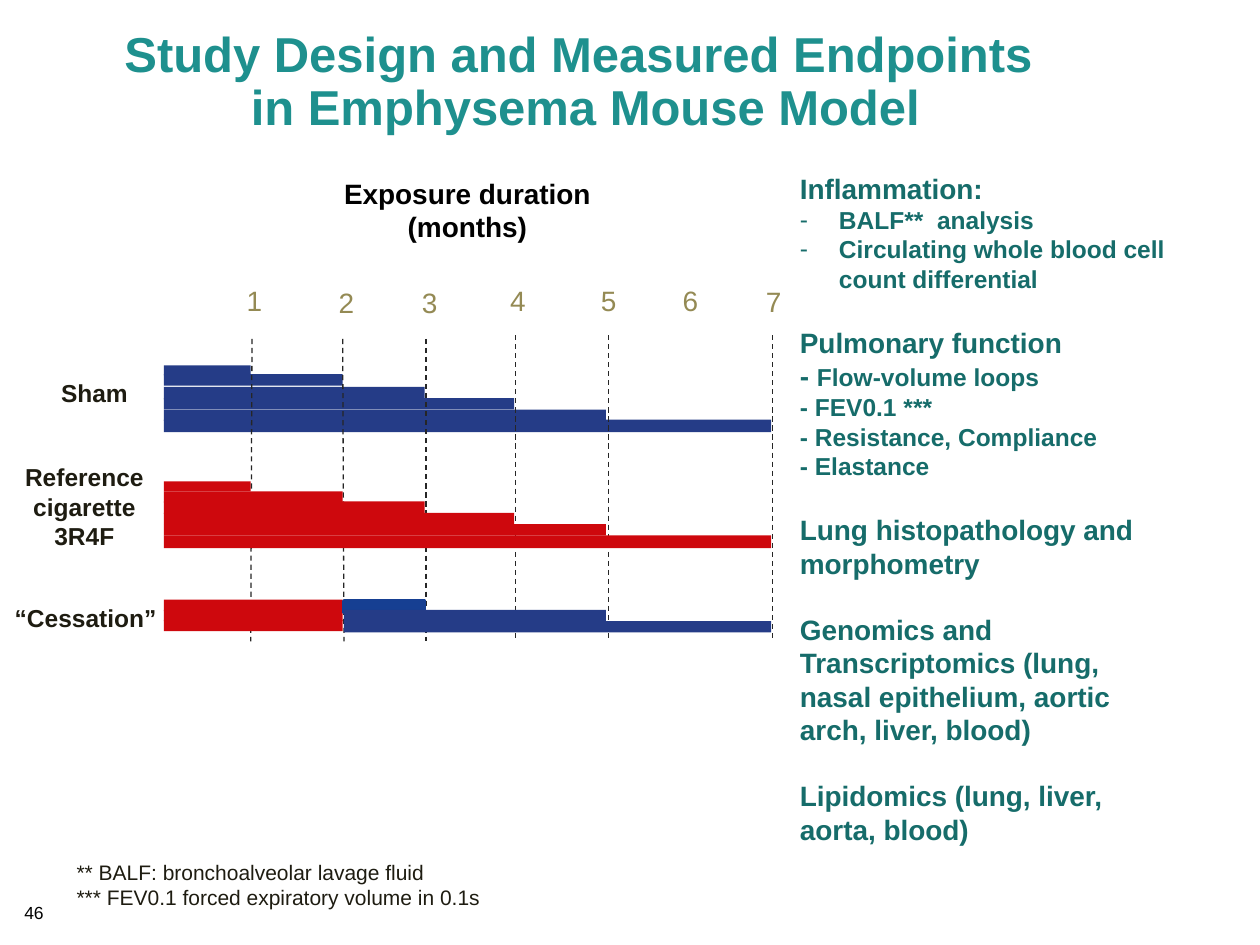
from dataclasses import dataclass

from lxml import etree
from pptx import Presentation
from pptx import util as u
from pptx.dml.color import RGBColor
from pptx.enum import dml, shapes, text
from pptx.oxml.ns import qn

COLORS = {
    "title": "1E908E",
    "endpoint": "166C6A",
    "month": "948A54",
    "label": "1E1C11",
    "black": "000000",
    "dash": "262626",
    "sham": "253C87",
    "smoke": "CE080D",
    "stop": "163F92",
}
FONT = "Arial"
START, QUIT = 1.3, 2.73
MONTH_ENDS = {1: 1.99, 2: 2.72, 3: 3.37, 4: 4.08, 5: 4.81, 7: 6.12}
STEP_HEIGHTS = (0.08, 0.09, 0.1, 0.09, 0.09, 0.1)
CENTER = text.PP_ALIGN.CENTER


@dataclass
class Para:
    text: str
    size: float = 14
    before: float = 0
    bullet: bool = False
    lead: str = ""


@dataclass
class Bar:
    left: float
    month: int
    top: float
    height: float
    color: str
    outline: float = 0


@dataclass
class Marker:
    x1: float
    x2: float
    top: float


@dataclass
class Label:
    text: str
    left: float
    top: float
    width: float
    height: float


def rgb(name: str) -> RGBColor:
    return RGBColor.from_string(COLORS[name])


def add_run(p, content: str, size: float, color: str, bold: bool) -> None:
    r = p.add_run()
    r.text = content
    r.font.name = FONT
    r.font.size = u.Pt(size)
    r.font.bold = bold
    r.font.color.rgb = rgb(color)


def add_bullet(p) -> None:
    pPr = p._p.get_or_add_pPr()
    pPr.set("marL", str(u.Inches(0.31)))
    pPr.set("indent", str(-u.Inches(0.31)))
    etree.SubElement(pPr, qn("a:buFont")).set("typeface", FONT)
    etree.SubElement(pPr, qn("a:buChar")).set("char", "-")


def add_text(s, paras: list[Para], left: float, top: float, width: float, height: float, *,
             color: str, bold: bool = False, align=text.PP_ALIGN.LEFT, wrap: bool = True,
             anchor=text.MSO_ANCHOR.TOP, spacing: float = 1.0) -> None:
    sp = s.shapes.add_textbox(u.Inches(left), u.Inches(top), u.Inches(width), u.Inches(height))
    tf = sp.text_frame
    tf.word_wrap = wrap
    tf.vertical_anchor = anchor
    for i, para in enumerate(paras):
        p = tf.add_paragraph() if i else tf.paragraphs[0]
        p.alignment = align
        p.line_spacing = spacing
        if para.before:
            p.space_before = u.Pt(para.before)
        if para.bullet:
            add_bullet(p)
        if para.lead:
            add_run(p, para.lead, 16, color, bold)
        for j, line in enumerate(para.text.split("\n")):
            if j:
                p.add_line_break()
            add_run(p, line, para.size, color, bold)


def add_bar(s, bar: Bar) -> None:
    sp = s.shapes.add_shape(shapes.MSO_SHAPE.RECTANGLE, u.Inches(bar.left), u.Inches(bar.top),
                            u.Inches(MONTH_ENDS[bar.month] - bar.left), u.Inches(bar.height))
    sp.shadow.inherit = False
    sp.fill.solid()
    sp.fill.fore_color.rgb = rgb(bar.color)
    if bar.outline:
        sp.line.color.rgb = rgb(bar.color)
        sp.line.width = u.Pt(bar.outline)
    else:
        sp.line.fill.background()


def add_staircase(s, tops: tuple[float, ...], color: str) -> None:
    for month, top, height in zip(MONTH_ENDS, tops, STEP_HEIGHTS):
        add_bar(s, Bar(START, month, top, height, color))


def add_marker(s, marker: Marker) -> None:
    line = s.shapes.add_connector(shapes.MSO_CONNECTOR.STRAIGHT, u.Inches(marker.x1),
                                  u.Inches(marker.top), u.Inches(marker.x2), u.Inches(5.09))
    line.line.color.rgb = rgb("dash")
    line.line.width = u.Pt(0.75)
    line.line.dash_style = dml.MSO_LINE.DASH
    etree.SubElement(line._element.spPr, qn("a:effectLst"))


MARKERS = [
    Marker(2, 1.99, 2.69), Marker(2.72, 2.73, 2.69), Marker(3.38, 3.38, 2.69),
    Marker(4.09, 4.09, 2.66), Marker(4.83, 4.83, 2.66), Marker(6.13, 6.13, 2.66),
]
MONTHS = [(2.01, 2.2), (2.74, 2.22), (3.4, 2.22), (4.1, 2.2), (4.82, 2.2), (5.47, 2.2), (6.13, 2.21)]
GROUPS = [
    Label("Sham", 0.17, 2.95, 1.16, 0.34),
    Label("Reference cigarette 3R4F", 0.09, 3.62, 1.16, 0.81),
    Label("“Cessation”", -0.09, 4.74, 1.54, 0.34),
]
CESSATION = [
    *(Bar(START, 2, top, 0.09, "smoke") for top in (4.92, 4.84, 4.76)),
    Bar(QUIT, 3, 4.77, 0.09, "stop", 2),
    Bar(QUIT, 5, 4.84, 0.1, "sham"),
    Bar(QUIT, 7, 4.93, 0.09, "sham"),
]
GAP = 18.4
ENDPOINTS = [
    Para("Inflammation:", 16),
    Para("BALF**  analysis", bullet=True),
    Para("Circulating whole blood cell count differential", bullet=True),
    Para("Pulmonary function", 16, GAP),
    Para("Flow-volume loops", lead="- "),
    Para("- FEV0.1 ***"),
    Para("- Resistance, Compliance"),
    Para("- Elastance"),
    Para("Lung histopathology and morphometry", 16, GAP),
    Para("Genomics and Transcriptomics (lung, nasal epithelium, aortic arch, liver, blood)", 16, GAP),
    Para("Lipidomics (lung, liver, aorta, blood)", 16, GAP),
]
FOOTNOTES = [
    Para("** BALF: bronchoalveolar lavage fluid", 12),
    Para("*** FEV0.1 forced expiratory volume in 0.1s", 12),
]


def main() -> None:
    prs = Presentation()
    prs.slide_width, prs.slide_height = u.Inches(10), u.Inches(7.5)
    s = prs.slides.add_slide(prs.slide_layouts[6])

    add_text(s, [Para("46", 10)], 0.06, 7.11, 0.42, 0.27, color="black", align=CENTER)
    add_staircase(s, (2.9, 2.97, 3.07, 3.16, 3.25, 3.33), "sham")
    add_text(s, [Para("Study Design and Measured Endpoints \nin Emphysema Mouse Model", 28)],
             0.04, 0.21, 9.21, 0.9, color="title", bold=True, align=CENTER,
             anchor=text.MSO_ANCHOR.MIDDLE, spacing=0.9)
    for marker in MARKERS:
        add_marker(s, marker)
    for month, (center, top) in enumerate(MONTHS, 1):
        add_text(s, [Para(str(month), 16)], center - 0.15, top, 0.3, 0.3,
                 color="month", align=CENTER, wrap=False)
    add_text(s, [Para("Exposure duration (months)", 16)], 2.14, 1.35, 3.14, 0.64,
             color="black", bold=True, align=CENTER)
    for group in GROUPS:
        add_text(s, [Para(group.text)], group.left, group.top, group.width, group.height,
                 color="label", bold=True, align=CENTER)
    add_text(s, FOOTNOTES, 0.51, 6.77, 3.43, 0.52, color="label", wrap=False)
    add_text(s, ENDPOINTS, 6.25, 1.31, 3.19, 5.55, color="endpoint", bold=True)
    add_staircase(s, (3.82, 3.9, 3.98, 4.07, 4.16, 4.25), "smoke")
    for bar in CESSATION:
        add_bar(s, bar)

    prs.save("out.pptx")


if __name__ == "__main__":
    main()
